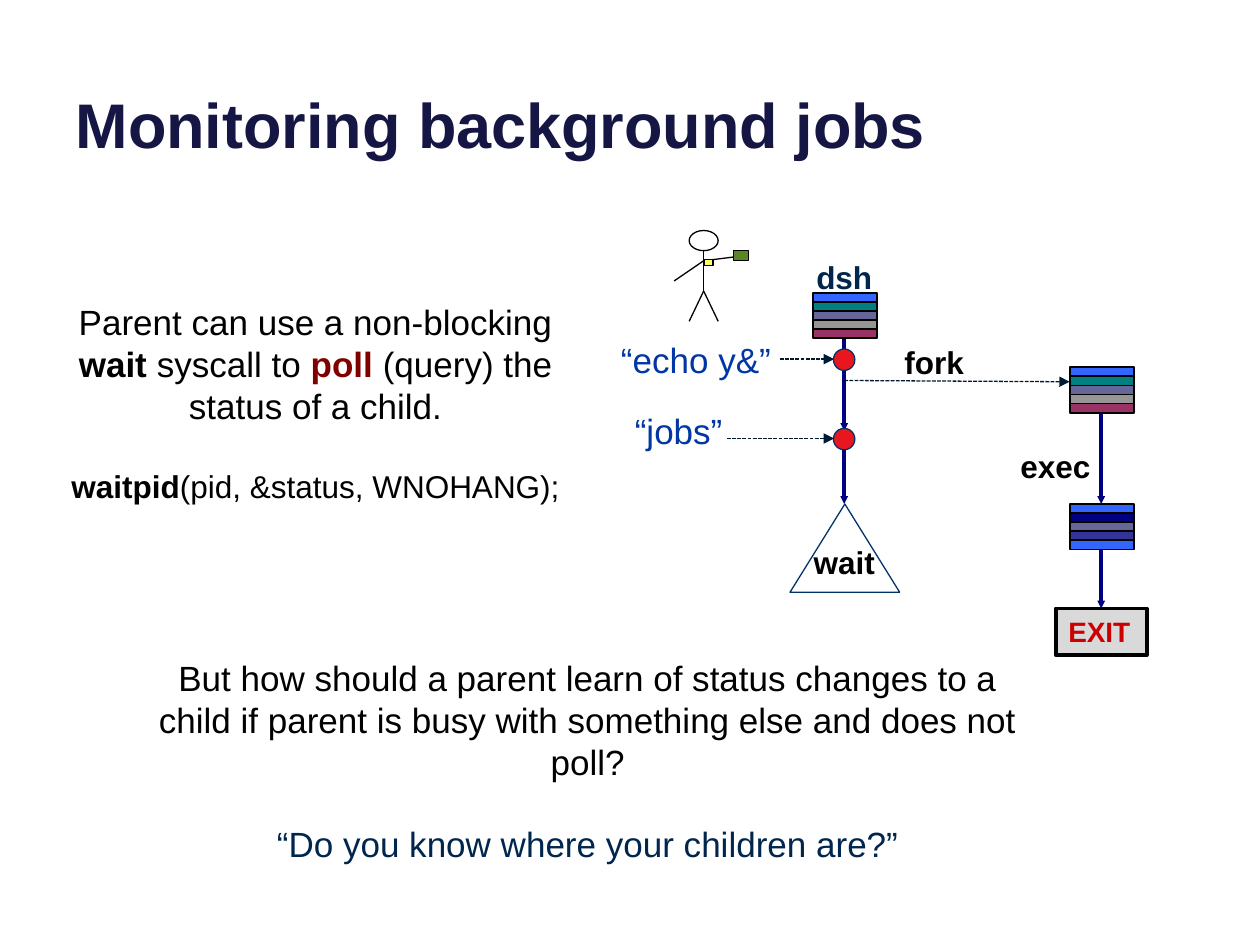
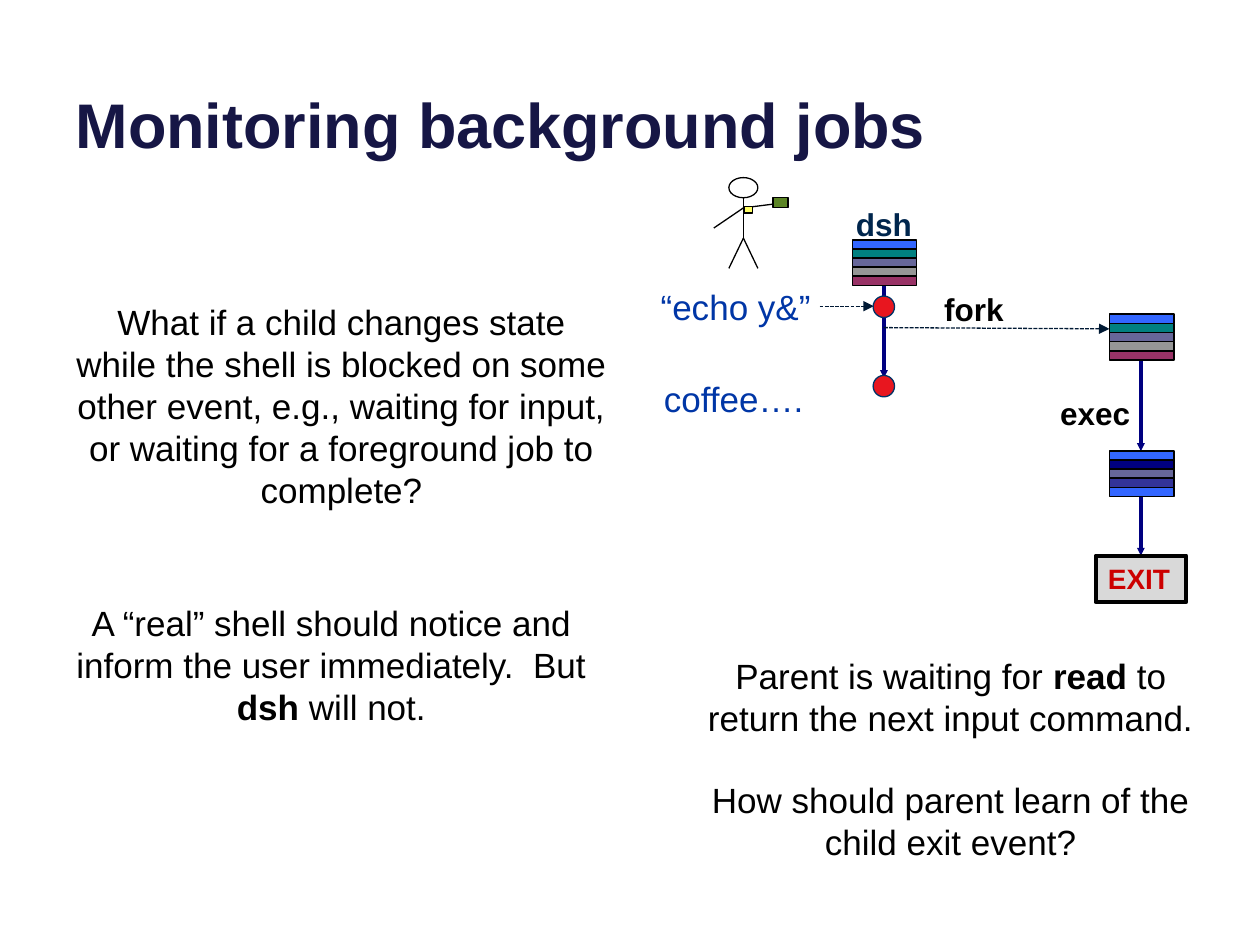
import pptx
import pptx.dml.color
import pptx.enum.dml
import pptx.enum.shapes
import pptx.enum.text
import pptx.oxml.ns
import pptx.util
from lxml import etree

PRESET = pptx.enum.shapes.MSO_SHAPE
ANCHOR = pptx.enum.text.MSO_ANCHOR
ALIGN = pptx.enum.text.PP_ALIGN
AUTO_SIZE = pptx.enum.text.MSO_AUTO_SIZE

COLORS = {
    "title": "161645", "black": "000000", "navy": "000080", "ink": "00264D",
    "command": "0036A6", "maroon": "800000", "signal": "001934",
    "outline": "003367", "event": "E8161F", "exit": "CC0000",
    "exit_box": "D9D9D9", "cup": "5C8526", "badge": "FFFF66",
    "blue": "3366FF", "teal": "008080", "slate": "666699",
    "gray": "969696", "plum": "993366", "indigo": "333399",
}
SHELL_IMAGE = ["blue", "teal", "slate", "gray", "plum"]
PROGRAM_IMAGE = ["blue", "navy", "slate", "indigo", "blue"]
BOLD = {"bold": True}
BLANK_LINE = 23


class JobSlides:
    """Draws slides on a grid of 100 columns by 75 rows in one shared style."""

    def __init__(self):
        self.deck = pptx.Presentation()
        self.deck.slide_width = pptx.util.Inches(10)
        self.deck.slide_height = pptx.util.Inches(7.5)
        self.column = self.deck.slide_width / 100
        self.row = self.deck.slide_height / 75

    def size(self, columns, rows):
        return round(columns * self.column), round(rows * self.row)

    def place(self, column, row):
        return self.size(column + self.origin[0], row + self.origin[1])

    def color(self, name):
        return pptx.dml.color.RGBColor.from_string(COLORS[name])

    def open_slide(self, title):
        self.origin = (0, 0)
        slide = self.deck.slides.add_slide(self.deck.slide_layouts[5])
        self.shapes = slide.shapes
        heading = self.shapes.title
        heading.left, heading.top = self.place(5, -3.7)
        heading.width, heading.height = self.size(90, 17)
        self.set_text(heading.text_frame, [[(title, BOLD)]], size=36, color="title",
                      frame={"vertical_anchor": ANCHOR.BOTTOM, "auto_size": AUTO_SIZE.NONE,
                             "word_wrap": True},
                      paragraph={"alignment": ALIGN.LEFT})

    def set_text(self, text_frame, paragraphs, size, color, frame, paragraph):
        for name, value in frame.items():
            setattr(text_frame, name, value)
        for index, runs in enumerate(paragraphs):
            line = text_frame.add_paragraph() if index else text_frame.paragraphs[0]
            if index:
                line.space_before = pptx.util.Pt(BLANK_LINE)
            for name, value in paragraph.items():
                setattr(line, name, value)
            for words, changes in runs:
                look = {"name": "Arial", "size": size, "color": color, "bold": False, **changes}
                look["size"] = pptx.util.Pt(look["size"])
                run = line.add_run()
                run.text = words
                run.font.color.rgb = self.color(look.pop("color"))
                for name, value in look.items():
                    setattr(run.font, name, value)

    def statement(self, column, row, columns, rows, paragraphs):
        box = self.shapes.add_textbox(*self.place(column, row), *self.size(columns, rows))
        self.set_text(box.text_frame, paragraphs, size=20, color="black",
                      frame={"word_wrap": True, "auto_size": AUTO_SIZE.SHAPE_TO_FIT_TEXT,
                             "vertical_anchor": ANCHOR.MIDDLE},
                      paragraph={"alignment": ALIGN.CENTER})

    def label(self, column, row, columns, words, color="black"):
        box = self.shapes.add_textbox(*self.place(column, row), *self.size(columns, 4))
        self.set_text(box.text_frame, [[(words, BOLD)]], size=18, color=color,
                      frame={"word_wrap": False, "auto_size": AUTO_SIZE.SHAPE_TO_FIT_TEXT},
                      paragraph={})

    def command(self, column, row, columns, words):
        box = self.shapes.add_textbox(*self.place(column, row), *self.size(columns, 4))
        self.set_text(box.text_frame, [[(words, {})]], size=20, color="command",
                      frame={"word_wrap": True, "auto_size": AUTO_SIZE.SHAPE_TO_FIT_TEXT},
                      paragraph={"line_spacing": 0.85})

    def shape(self, preset, column, row, columns, rows, fill=None, line="black", weight=0.75):
        figure = self.shapes.add_shape(preset, *self.place(column, row),
                                       *self.size(columns, rows))
        figure.shadow.inherit = False
        if fill:
            figure.fill.solid()
            figure.fill.fore_color.rgb = self.color(fill)
        else:
            figure.fill.background()
        figure.line.color.rgb = self.color(line)
        figure.line.width = pptx.util.Pt(weight)
        return figure

    def line(self, start, end, color="black", weight=0.75, arrow=None, dash=None):
        connector = self.shapes.add_connector(pptx.enum.shapes.MSO_CONNECTOR.STRAIGHT,
                                              *self.place(*start), *self.place(*end))
        stroke = {"width": pptx.util.Pt(weight), "dash_style": dash}
        connector.line.color.rgb = self.color(color)
        for name, value in stroke.items():
            setattr(connector.line, name, value)
        qn = pptx.oxml.ns.qn
        properties = connector.element.spPr
        if arrow:
            etree.SubElement(properties.find(qn("a:ln")), qn("a:tailEnd"),
                             type="triangle", w=arrow, len=arrow)
        etree.SubElement(properties, qn("a:effectLst"))

    def flow(self, column, top, bottom):
        self.line((column, top), (column, bottom), "navy", 2.25, arrow="sm")

    def signal(self, start, end):
        self.line(start, end, "signal", arrow="med",
                  dash=pptx.enum.dml.MSO_LINE.SQUARE_DOT)

    def event(self, row):
        self.shape(PRESET.OVAL, 66.15, row, 1.7, 1.7, "event", "outline")

    def grouped(self, draw, *details):
        slide_shapes = self.shapes
        self.shapes = slide_shapes.add_group_shape().shapes
        draw(*details)
        self.shapes = slide_shapes

    def process(self, column, row, segments):
        for index, segment in enumerate(segments):
            self.shape(PRESET.FLOWCHART_PROCESS, column, row + 0.72 * index,
                       5.1, 0.72, segment, weight=1)

    def user(self):
        neck, hips, shoulder = (55.85, 19.9), (55.85, 23.1), (55.85, 20.7)
        left_foot, right_foot = (54.7, 25.5), (57, 25.5)
        for start, end in [(neck, hips), (hips, left_foot), (hips, right_foot),
                           (shoulder, (59, 20.3)), (shoulder, (53.5, 22.3))]:
            self.line(start, end)
        self.shape(PRESET.OVAL, 54.7, 18.3, 2.3, 1.6)
        self.shape(PRESET.RECTANGLE, 58.2, 19.9, 1.2, 0.8, "cup")
        self.shape(PRESET.RECTANGLE, 55.9, 20.6, 0.7, 0.5, "badge")

    def exit_box(self):
        box = self.shape(PRESET.RECTANGLE, 83.8, 48.3, 7.2, 3.7, "exit_box", weight=2.25)
        self.set_text(box.text_frame, [[("EXIT", BOLD)]], size=16, color="exit",
                      frame={"word_wrap": True, "vertical_anchor": ANCHOR.TOP},
                      paragraph={"alignment": ALIGN.LEFT})

    def background_job(self, origin):
        self.origin = origin
        self.flow(67, 24.2, 34.2)
        self.grouped(self.process, 64.5, 23.25, SHELL_IMAGE)
        self.flow(87.4, 32.8, 40)
        self.flow(87.4, 43.6, 48.3)
        self.grouped(self.process, 84.9, 40, PROGRAM_IMAGE)
        self.grouped(self.process, 84.9, 29.15, SHELL_IMAGE)
        self.label(70.8, 26.7, 6.9, "fork")
        self.label(80, 35, 7.6, "exec")
        self.label(63.8, 20, 6.5, "dsh", "ink")
        self.exit_box()
        self.grouped(self.user)
        self.command(48.3, 26.9, 25, "“echo y&”")
        self.signal((61.9, 28.5), (66.2, 28.5))
        self.signal((67, 30.2), (84.9, 30.3))
        self.event(27.7)
        self.event(34)

    def polling_slide(self):
        self.open_slide("Monitoring background jobs")
        self.background_job((0, 0))
        self.command(49.4, 32.5, 10, "“jobs”")
        self.signal((57.7, 34.8), (66.2, 34.8))
        self.flow(67, 35.6, 40)
        wait_state = self.shape(PRESET.FLOWCHART_MERGE, 62.7, 40, 8.7, 7, line="outline")
        wait_state.rotation = 180
        self.label(63.6, 42.6, 6.9, "wait")
        self.statement(10, 53.1, 73.3, 14.5, [
            [("But how should a parent learn of status changes to a child if parent "
              "is busy with something else and does not poll?", {})],
            [("“Do you know where your children are?”", {"color": "ink"})]])
        self.statement(4.2, 23.2, 41.7, 17.5, [
            [("Parent can use a non-blocking ", {}), ("wait ", BOLD), ("syscall to ", {}),
             ("poll ", {"bold": True, "color": "maroon"}),
             ("(query) the status of a child.", {})],
            [("waitpid", {"bold": True, "size": 18}),
             ("(pid, &status, WNOHANG);", {"size": 18})]])

    def blocked_slide(self):
        self.open_slide("Monitoring background jobs")
        self.background_job((3.15, -4.2))
        self.origin = (0, 0)
        self.command(51.7, 30, 25, "coffee….")
        self.statement(54.2, 51.3, 42.5, 17.8, [
            [("Parent is waiting for ", {}), ("read", BOLD),
             (" to return the next input command.", {})],
            [("How should parent learn of the child exit event?", {})]])
        self.statement(5, 23.3, 44.2, 17.8, [
            [("What if a child changes state while the shell is blocked on some other "
              "event, e.g., waiting for input, or waiting for a foreground job to "
              "complete?", {})]])
        self.statement(4.2, 47.2, 44.2, 11.1, [
            [("A “real” shell should notice and inform the user immediately.  But ", {}),
             ("dsh", BOLD), (" will not.", {})]])


def main():
    slides = JobSlides()
    slides.polling_slide()
    slides.blocked_slide()
    slides.deck.save("out.pptx")


if __name__ == "__main__":
    main()
